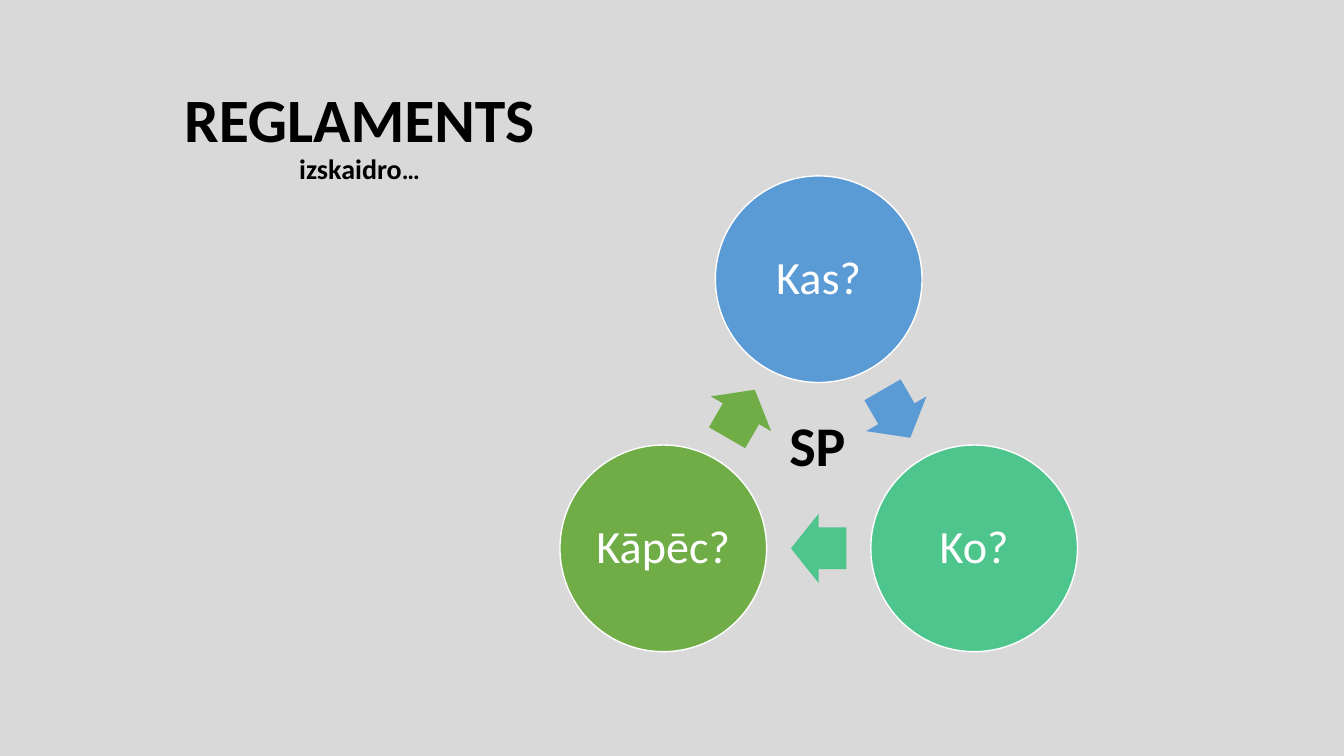
"""Build the slide with a three-step question cycle around SP."""
from dataclasses import dataclass
from math import cos, radians, sin

from pptx import Presentation
from pptx.dml.color import RGBColor
from pptx.enum.shapes import MSO_SHAPE
from pptx.enum.text import MSO_ANCHOR, PP_ALIGN
from pptx.shapes.autoshape import Shape
from pptx.slide import Slide
from pptx.text.text import TextFrame
from pptx.util import Inches, Pt

ELLIPSE = MSO_SHAPE.OVAL
ARROW = MSO_SHAPE.RIGHT_ARROW
MIDDLE = MSO_ANCHOR.MIDDLE
TOP = MSO_ANCHOR.TOP
CENTER = PP_ALIGN.CENTER
LEFT = PP_ALIGN.LEFT

FONT = "Calibri"
BACKGROUND = "D9D9D9"
BLACK = "000000"
WHITE = "FFFFFF"

CYCLE_X, CYCLE_Y = 8.12, 4.55
CIRCLE_RADIUS = 1.78
ARROW_RADIUS = 0.89
CIRCLE_SIZE = 2.05
ARROW_WIDTH, ARROW_HEIGHT = 0.55, 0.69
CIRCLE_INSET = 0.05


@dataclass(frozen=True)
class Step:
    """A question in the cycle and its colour."""

    question: str
    color: str


@dataclass(frozen=True)
class Run:
    """A piece of text with its size and weight."""

    text: str
    size: float
    bold: bool = True
    color: str = BLACK


STEPS = (
    Step("Kas?", "5B9BD5"),
    Step("Ko?", "4DC58D"),
    Step("Kāpēc?", "70AD47"),
)
TITLE_LINES = (
    (Run("REGLAMENTS", 44),),
    (Run("izskaidro", 20), Run("…", 18)),
)


def rgb(value: str) -> RGBColor:
    """Turn a hex string into a colour."""
    return RGBColor.from_string(value)


def set_attributes(target: object, values: dict) -> None:
    """Set each named format value on the target."""
    for name, value in values.items():
        setattr(target, name, value)


def write_lines(
    frame: TextFrame,
    lines: tuple[tuple[Run, ...], ...],
    alignment: PP_ALIGN,
    line_spacing: float,
) -> None:
    """Write lines of runs into one paragraph."""
    paragraph = frame.paragraphs[0]
    set_attributes(paragraph, {"alignment": alignment, "line_spacing": line_spacing})
    for index, line in enumerate(lines):
        if index:
            paragraph.add_line_break()
        for item in line:
            run = paragraph.add_run()
            run.text = item.text
            set_attributes(
                run.font, {"name": FONT, "size": Pt(item.size), "bold": item.bold}
            )
            run.font.color.rgb = rgb(item.color)


def add_text(
    slide: Slide,
    box: tuple[float, float, float, float],
    lines: tuple[tuple[Run, ...], ...],
    anchor: MSO_ANCHOR,
    alignment: PP_ALIGN,
    line_spacing: float,
) -> None:
    """Add a wrapping text box."""
    frame = slide.shapes.add_textbox(*map(Inches, box)).text_frame
    set_attributes(frame, {"word_wrap": True, "vertical_anchor": anchor})
    write_lines(frame, lines, alignment, line_spacing)


def add_cycle_shape(
    slide: Slide,
    kind: MSO_SHAPE,
    angle: float,
    radius: float,
    size: tuple[float, float],
    color: str,
) -> Shape:
    """Add a filled shape centred at an angle on the cycle."""
    width, height = size
    left = CYCLE_X + radius * cos(radians(angle)) - width / 2
    top = CYCLE_Y + radius * sin(radians(angle)) - height / 2
    shape = slide.shapes.add_shape(kind, *map(Inches, (left, top, width, height)))
    shape.shadow.inherit = False
    shape.fill.solid()
    shape.fill.fore_color.rgb = rgb(color)
    return shape


def add_step(slide: Slide, step: Step, angle: float) -> None:
    """Add a question circle and the arrow to the next one."""
    circle = add_cycle_shape(
        slide, ELLIPSE, angle, CIRCLE_RADIUS, (CIRCLE_SIZE, CIRCLE_SIZE), step.color
    )
    circle.line.color.rgb = rgb(WHITE)
    circle.line.width = Pt(1)
    inset = Inches(CIRCLE_INSET)
    set_attributes(
        circle.text_frame,
        {
            "word_wrap": True,
            "vertical_anchor": MIDDLE,
            "margin_left": inset,
            "margin_right": inset,
            "margin_top": inset,
            "margin_bottom": inset,
        },
    )
    label = Run(step.question, 33, False, WHITE)
    write_lines(circle.text_frame, ((label,),), CENTER, 0.9)

    arrow = add_cycle_shape(
        slide, ARROW, angle + 60, ARROW_RADIUS, (ARROW_WIDTH, ARROW_HEIGHT), step.color
    )
    arrow.line.fill.background()
    arrow.adjustments[0] = 0.6
    arrow.adjustments[1] = 0.5
    arrow.rotation = (angle + 150) % 360


def main() -> None:
    """Build and save the presentation."""
    presentation = Presentation()
    presentation.slide_width = Inches(13.33)
    presentation.slide_height = Inches(7.5)
    slide = presentation.slides.add_slide(presentation.slide_layouts[6])
    slide.background.fill.solid()
    slide.background.fill.fore_color.rgb = rgb(BACKGROUND)

    add_text(slide, (0.47, 0.64, 6.19, 1.45), TITLE_LINES, MIDDLE, CENTER, 0.9)
    for index, step in enumerate(STEPS):
        add_step(slide, step, -90 + index * 360 / len(STEPS))
    add_text(slide, (7.73, 4.02, 0.78, 0.77), ((Run("SP", 40),),), TOP, LEFT, 1.0)
    presentation.save("out.pptx")


if __name__ == "__main__":
    main()
